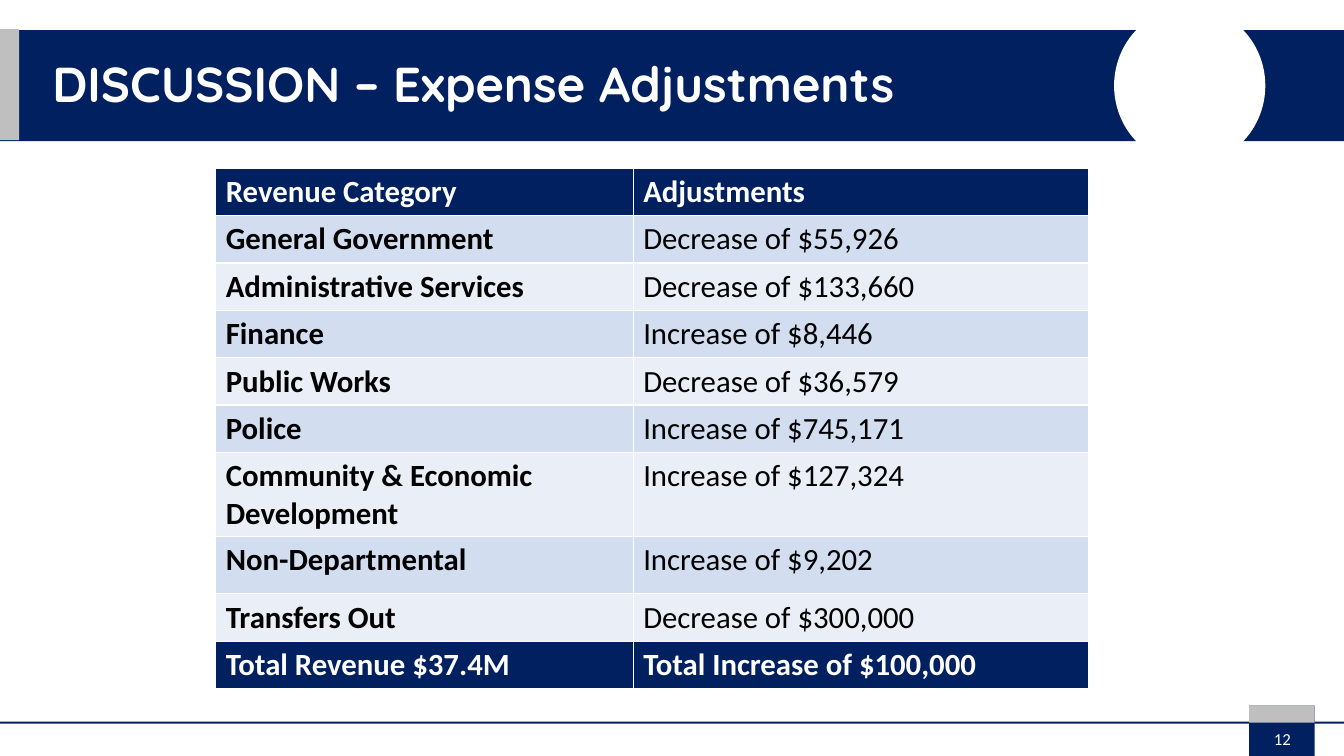
"""Build the expense adjustments slide with its banner, table and page number."""
from pptx import Presentation
from pptx.dml.color import RGBColor
from pptx.enum.shapes import MSO_SHAPE as SHAPE
from pptx.enum.text import MSO_ANCHOR as ANCHOR, PP_ALIGN as ALIGN
from pptx.util import Inches, Pt

TITLE = "DISCUSSION – Expense Adjustments"
PAGE = "12"
ROWS = [
    ("Revenue Category", "Adjustments"),
    ("General Government", "Decrease of $55,926"),
    ("Administrative Services", "Decrease of $133,660"),
    ("Finance", "Increase of $8,446"),
    ("Public Works", "Decrease of $36,579"),
    ("Police", "Increase of $745,171"),
    ("Community & Economic Development", "Increase of $127,324"),
    ("Non-Departmental", "Increase of $9,202"),
    ("Transfers Out", "Decrease of $300,000"),
    ("Total Revenue $37.4M", "Total Increase of $100,000"),
]
COLORS = {"navy": "002060", "gray": "BFBFBF", "white": "FFFFFF", "black": "000000",
          "band": "D2DEEF", "pale": "EAEFF7"}
WIDTH, HEIGHT = 13.33, 7.5
TAB_LEFT, TAB_TOP, TAB_WIDTH = 12.39, 7, 0.65
DECOR = [
    (SHAPE.RECTANGLE, "navy", (0, 0.3, WIDTH, 1.1)),
    (SHAPE.OVAL, "white", (11.05, 0.07, 1.5, 1.56)),
    (SHAPE.RECTANGLE, "gray", (0, 0.29, 0.19, 1.1)),
    (SHAPE.RECTANGLE, "navy", (0, 7.16, WIDTH, 0.02)),
    (SHAPE.RECTANGLE, "navy", (TAB_LEFT, TAB_TOP, TAB_WIDTH, HEIGHT - TAB_TOP)),
    (SHAPE.RECTANGLE, "gray", (TAB_LEFT, TAB_TOP, TAB_WIDTH, 0.17)),
]
TITLE_BOX = (0.42, 0.4, 10.43, 0.91)
PAGE_BOX = (12.27, 7.13, 0.9, 0.4)
TABLE_LEFT, TABLE_TOP = 2.14, 1.67
COL_WIDTHS = (4.14, 4.52)
ROW_HEIGHT, TALL_ROW_HEIGHT, TALL_ROW = 0.47, 0.57, "Non-Departmental"


def color(name):
    return RGBColor.from_string(COLORS[name])


def inches(box):
    return [Inches(n) for n in box]


def write(tf, text, *, size, fill, font="Calibri", bold=False, align=ALIGN.LEFT,
          anchor=ANCHOR.TOP, spacing=1.0):
    tf.word_wrap = True
    tf.vertical_anchor = anchor
    p = tf.paragraphs[0]
    p.alignment, p.line_spacing = align, spacing
    r = p.add_run()
    r.text = text
    r.font.name, r.font.size, r.font.bold = font, Pt(size), bold
    r.font.color.rgb = color(fill)


def add_decor(s):
    for kind, fill, box in DECOR:
        sp = s.shapes.add_shape(kind, *inches(box))
        sp.shadow.inherit = False
        sp.fill.solid()
        sp.fill.fore_color.rgb = color(fill)
        sp.line.fill.background()


def add_title(s):
    sp = s.shapes.title
    sp.left, sp.top, sp.width, sp.height = inches(TITLE_BOX)
    s.shapes._spTree.append(sp._element)
    write(sp.text_frame, TITLE, size=35, fill="white", font="Quicksand", bold=True,
          anchor=ANCHOR.MIDDLE, spacing=0.9)


def add_expenses(s):
    box = (TABLE_LEFT, TABLE_TOP, sum(COL_WIDTHS), ROW_HEIGHT * len(ROWS))
    table = s.shapes.add_table(len(ROWS), len(COL_WIDTHS), *inches(box)).table
    for col, width in zip(table.columns, COL_WIDTHS):
        col.width = Inches(width)
    for i, texts in enumerate(ROWS):
        tall = texts[0] == TALL_ROW
        table.rows[i].height = Inches(TALL_ROW_HEIGHT if tall else ROW_HEIGHT)
        edge = i in (0, len(ROWS) - 1)
        fill = "navy" if edge else "band" if i % 2 else "pale"
        for j, text in enumerate(texts):
            cell = table.cell(i, j)
            cell.fill.solid()
            cell.fill.fore_color.rgb = color(fill)
            write(cell.text_frame, text, size=22, fill="white" if edge else "black",
                  bold=edge or j == 0)


def main():
    prs = Presentation()
    prs.slide_width, prs.slide_height = Inches(WIDTH), Inches(HEIGHT)
    s = prs.slides.add_slide(prs.slide_layouts.get_by_name("Title Only"))
    add_decor(s)
    add_title(s)
    page = s.shapes.add_textbox(*inches(PAGE_BOX))
    write(page.text_frame, PAGE, size=12, fill="white", align=ALIGN.CENTER,
          anchor=ANCHOR.MIDDLE)
    add_expenses(s)
    prs.save("out.pptx")


if __name__ == "__main__":
    main()
